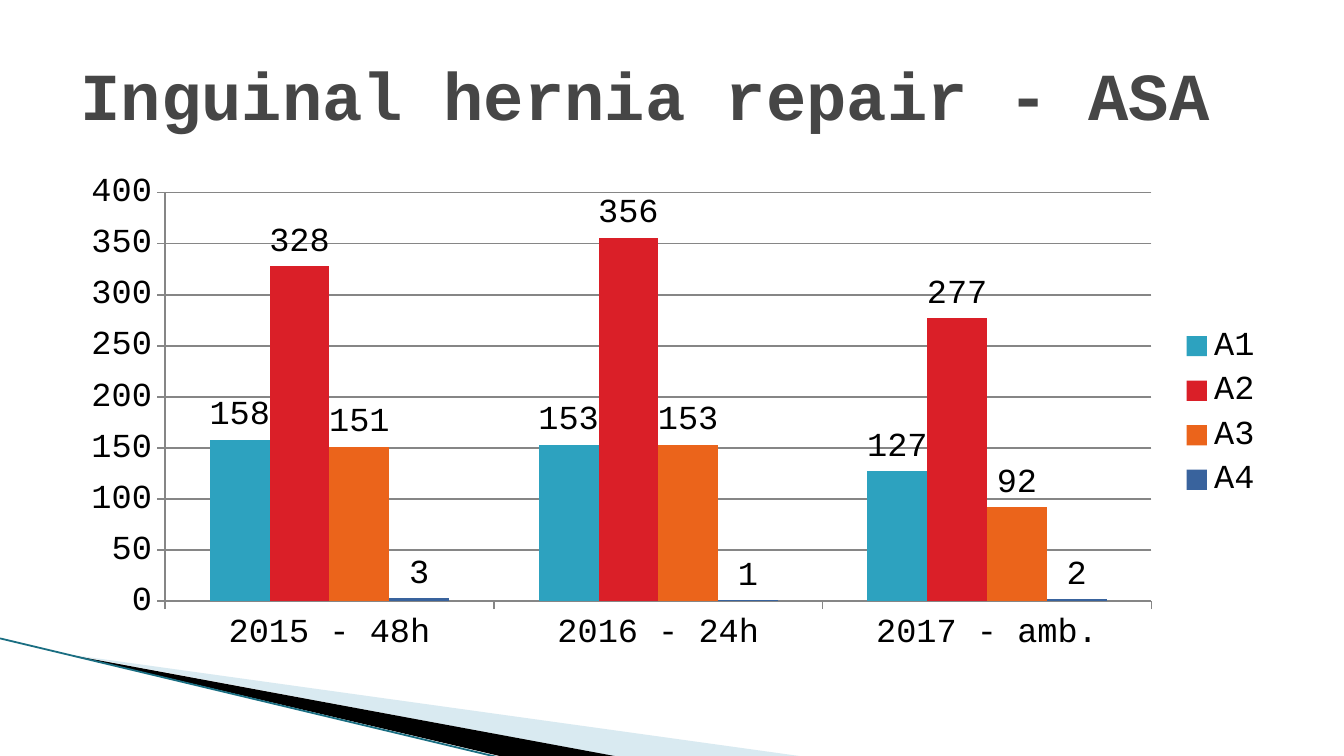
from dataclasses import dataclass
from typing import Optional

import pptx
import pptx.chart.data
import pptx.dml.color
import pptx.enum.chart
import pptx.enum.shapes
import pptx.enum.text
import pptx.oxml.ns
import pptx.oxml.xmlchemy
import pptx.util

RGBColor = pptx.dml.color.RGBColor
XL = pptx.enum.chart

PX = 9525
FONT = "Courier New"
BLACK = RGBColor(0x00, 0x00, 0x00)
GRAY = RGBColor(0x46, 0x46, 0x46)
GRID = RGBColor(0x86, 0x86, 0x86)
PALE_BLUE = RGBColor(0xA0, 0xCB, 0xDC)
DARK_TEAL = RGBColor(0x1A, 0x6E, 0x82)
TEAL = RGBColor(0x2D, 0xA2, 0xBF)
RED = RGBColor(0xDA, 0x1F, 0x28)
ORANGE = RGBColor(0xEB, 0x64, 0x1B)
BLUE = RGBColor(0x39, 0x63, 0x9D)


@dataclass(frozen=True)
class Wedge:
    points: tuple[tuple[int, int], ...]
    color: RGBColor
    alpha: Optional[int] = None


@dataclass(frozen=True)
class Grade:
    name: str
    values: tuple[int, ...]
    color: RGBColor


WEDGES = (
    Wedge(((53, 468), (571, 540), (438, 540)), PALE_BLUE, 40),
    Wedge(((51, 468), (439, 540), (357, 540)), BLACK),
)
PERIODS = ("2015 - 48h", "2016 - 24h", "2017 - amb.")
GRADES = (
    Grade("A1", (158, 153, 127), TEAL),
    Grade("A2", (328, 356, 277), RED),
    Grade("A3", (151, 153, 92), ORANGE),
    Grade("A4", (3, 1, 2), BLUE),
)


def px(n: int) -> pptx.util.Emu:
    return pptx.util.Emu(n * PX)


def set_attrs(obj, values: dict) -> None:
    for name, value in values.items():
        setattr(obj, name, value)


def add_wedge(s, wedge: Wedge) -> None:
    builder = s.shapes.build_freeform(*wedge.points[0], scale=PX)
    builder.add_line_segments(wedge.points[1:], close=True)
    sp = builder.convert_to_shape()
    sp.shadow.inherit = False
    sp.fill.solid()
    sp.fill.fore_color.rgb = wedge.color
    sp.line.fill.background()
    if wedge.alpha is not None:
        clr = sp._element.spPr.find(".//" + pptx.oxml.ns.qn("a:srgbClr"))
        alpha = pptx.oxml.xmlchemy.OxmlElement("a:alpha")
        alpha.set("val", str(wedge.alpha * 1000))
        clr.append(alpha)


def add_edge(s) -> None:
    line = s.shapes.add_connector(
        pptx.enum.shapes.MSO_CONNECTOR.STRAIGHT, px(0), px(456), px(356), px(541))
    line.line.color.rgb = DARK_TEAL
    line.line.width = pptx.util.Pt(0.95)
    line._element.spPr.append(pptx.oxml.xmlchemy.OxmlElement("a:effectLst"))


def add_grade_chart(s) -> None:
    data = pptx.chart.data.CategoryChartData()
    data.categories = PERIODS
    for grade in GRADES:
        data.add_series(grade.name, grade.values)
    chart = s.shapes.add_chart(
        XL.XL_CHART_TYPE.COLUMN_CLUSTERED,
        px(48), px(117), px(864), px(356), data).chart
    set_attrs(chart, {"has_title": False, "has_legend": True})
    set_attrs(chart.font, {"name": FONT, "size": pptx.util.Pt(18)})
    chart.font.color.rgb = BLACK
    set_attrs(chart.legend, {
        "position": XL.XL_LEGEND_POSITION.RIGHT, "include_in_layout": False})
    plot = chart.plots[0]
    set_attrs(plot, {"gap_width": 150, "overlap": 0,
                     "vary_by_categories": False})
    for axis in (chart.category_axis, chart.value_axis):
        axis.major_tick_mark = XL.XL_TICK_MARK.OUTSIDE
        axis.format.line.color.rgb = GRID
    set_attrs(chart.value_axis, {
        "minimum_scale": 0, "maximum_scale": 400, "major_unit": 50,
        "has_major_gridlines": True})
    chart.value_axis.major_gridlines.format.line.color.rgb = GRID
    for series, grade in zip(plot.series, GRADES):
        series.format.fill.solid()
        series.format.fill.fore_color.rgb = grade.color
        set_attrs(series.data_labels, {
            "show_value": True,
            "position": XL.XL_LABEL_POSITION.OUTSIDE_END})


def add_title(s, text: str) -> None:
    sp = s.shapes.title
    set_attrs(sp, {"left": px(48), "top": px(22),
                   "width": px(864), "height": px(90)})
    tf = sp.text_frame
    set_attrs(tf, {"word_wrap": True,
                   "vertical_anchor": pptx.enum.text.MSO_ANCHOR.MIDDLE})
    p = tf.paragraphs[0]
    p.alignment = pptx.enum.text.PP_ALIGN.LEFT
    r = p.add_run()
    r.text = text
    set_attrs(r.font, {"name": FONT, "size": pptx.util.Pt(36), "bold": True})
    r.font.color.rgb = GRAY


def main() -> None:
    prs = pptx.Presentation()
    set_attrs(prs, {"slide_width": px(960), "slide_height": px(540)})
    s = prs.slides.add_slide(prs.slide_layouts[5])
    for wedge in WEDGES:
        add_wedge(s, wedge)
    add_edge(s)
    add_grade_chart(s)
    add_title(s, "Inguinal hernia repair - ASA")
    prs.save("out.pptx")


if __name__ == "__main__":
    main()
